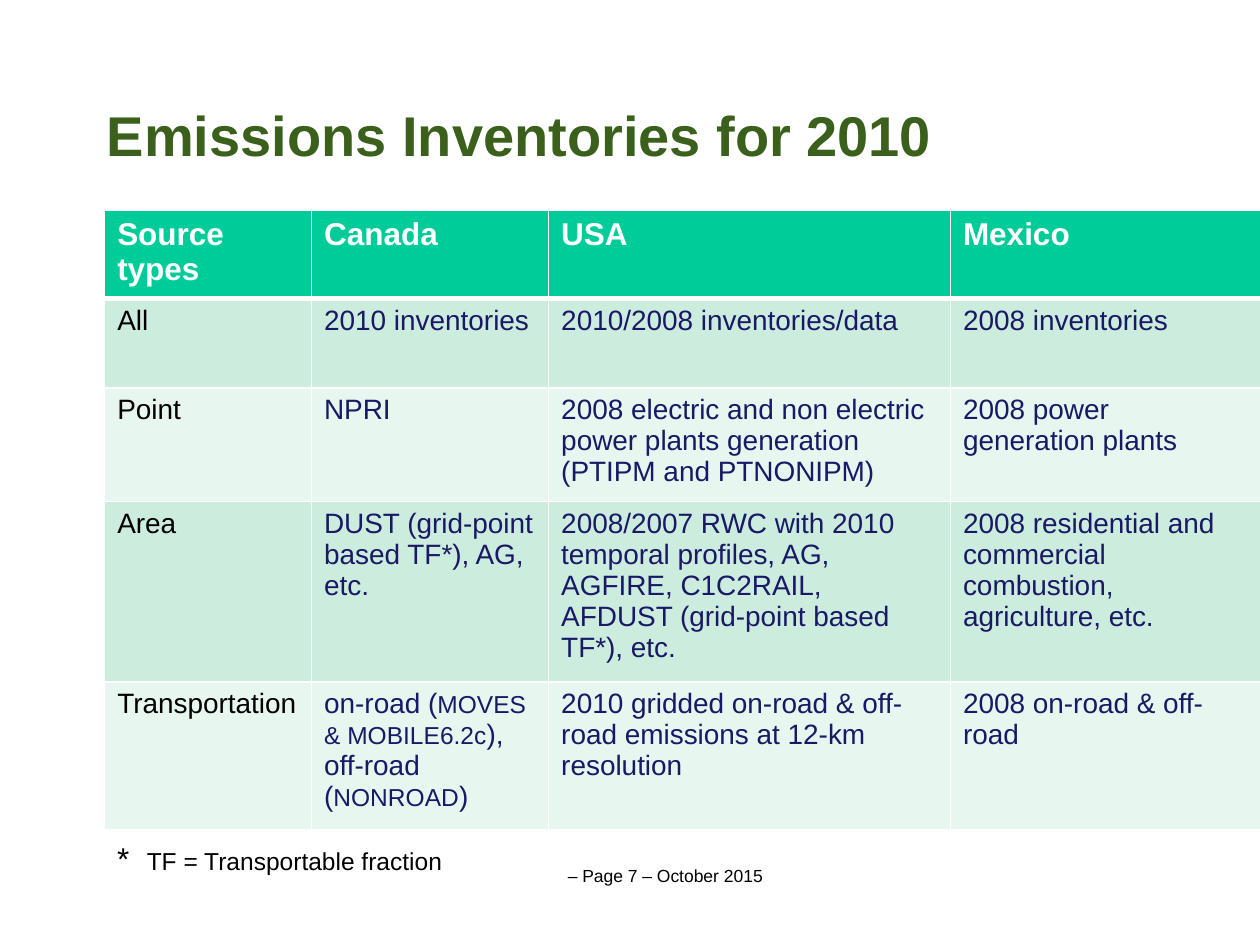
"""Build the slide on emissions inventories for 2010."""
from lxml import etree
from pptx import Presentation
from pptx.dml.color import RGBColor
from pptx.enum import text
from pptx.oxml import ns
from pptx.util import Cm, Pt

WHITE = RGBColor(0xFF, 0xFF, 0xFF)
BLACK = RGBColor(0, 0, 0)
NAVY = RGBColor(0x19, 0x19, 0x66)
OLIVE = RGBColor(0x3A, 0x60, 0x1B)
GREEN = RGBColor(0x00, 0xCC, 0x99)
BANDS = (RGBColor(0xCC, 0xEC, 0xDE), RGBColor(0xE7, 0xF6, 0xEF))

TITLE = "Emissions Inventories for 2010"
FOOTER = "– Page 7 – October 2015"
FOOTNOTE = [("*\t", 18), ("TF = Transportable fraction", 14)]
CANADA_TRANSPORT = [
    [("on-road (", 16), ("MOVES & MOBILE6.2c", 14), ("),", 16)],
    [("off-road (", 16), ("NONROAD", 14), (")", 16)],
]
INVENTORIES = [
    ["Source types", "Canada", "USA", "Mexico"],
    ["All", "2010 inventories", "2010/2008 inventories/data", "2008 inventories"],
    ["Point", "NPRI",
     "2008 electric and non electric power plants generation (PTIPM and PTNONIPM)",
     "2008 power generation plants"],
    ["Area", "DUST (grid-point based TF*), AG, etc.",
     "2008/2007 RWC with 2010 temporal profiles, AG, AGFIRE, C1C2RAIL, "
     "AFDUST (grid-point based TF*), etc.",
     "2008 residential and commercial combustion, agriculture, etc."],
    ["Transportation", CANADA_TRANSPORT,
     "2010 gridded on-road & off-road emissions at 12-km resolution",
     "2008 on-road & off-road"],
]
COLUMN_WIDTHS = (4.17, 4.78, 8.1, 6.25)
ROW_HEIGHTS = (1.78, 1.8, 2.29, 2.97, 2.97)
LEFT = 2.11


def add_runs(paragraph, pieces, color, bold=False):
    for words, size in pieces:
        run = paragraph.add_run()
        run.text = words
        run.font.name = "Arial"
        run.font.size = Pt(size)
        run.font.bold = bold
        run.font.color.rgb = color


def set_borders(cell, bottom):
    properties = cell._tc.get_or_add_tcPr()
    widths = {"lnL": 1, "lnR": 1, "lnT": 1, "lnB": bottom}
    for place, (side, width) in enumerate(widths.items()):
        line = etree.Element(ns.qn(f"a:{side}"), w=str(Pt(width)))
        fill = etree.SubElement(line, ns.qn("a:solidFill"))
        etree.SubElement(fill, ns.qn("a:srgbClr"), val=str(WHITE))
        properties.insert(place, line)


def fill_cell(cell, content, row, column):
    header = row == 0
    color = WHITE if header else BLACK if column == 0 else NAVY
    lines = [[(content, 18 if header else 16)]] if isinstance(content, str) else content
    frame = cell.text_frame
    for number, pieces in enumerate(lines):
        paragraph = frame.add_paragraph() if number else frame.paragraphs[0]
        add_runs(paragraph, pieces, color, header)
    cell.fill.solid()
    cell.fill.fore_color.rgb = GREEN if header else BANDS[(row - 1) % 2]
    set_borders(cell, 3 if header or row == 0 else 1)


def add_inventories(slide):
    table = slide.shapes.add_table(
        len(INVENTORIES), len(COLUMN_WIDTHS), Cm(LEFT), Cm(4.24),
        Cm(sum(COLUMN_WIDTHS)), Cm(sum(ROW_HEIGHTS))).table
    for column, width in zip(table.columns, COLUMN_WIDTHS):
        column.width = Cm(width)
    for row, height in zip(table.rows, ROW_HEIGHTS):
        row.height = Cm(height)
    for row, contents in enumerate(INVENTORIES):
        for column, content in enumerate(contents):
            fill_cell(table.cell(row, column), content, row, column)


def add_note(slide, top, width, height, pieces, wrap):
    frame = slide.shapes.add_textbox(Cm(LEFT), Cm(top), Cm(width), Cm(height)).text_frame
    frame.word_wrap = wrap
    add_runs(frame.paragraphs[0], pieces, BLACK)
    return frame.paragraphs[0]


def main():
    deck = Presentation()
    deck.slide_width, deck.slide_height = Cm(25.4), Cm(19.05)
    slide = deck.slides.add_slide(deck.slide_layouts[5])

    footer = add_note(slide, 17.32, 22.6, 0.69, [(FOOTER, 10)], True)
    footer.alignment = text.PP_ALIGN.CENTER

    title = slide.shapes.title
    title.left, title.top, title.width, title.height = Cm(1.9), Cm(1.4), Cm(22.22), Cm(2.62)
    title.text_frame.auto_size = text.MSO_AUTO_SIZE.NONE
    title.text_frame.vertical_anchor = text.MSO_ANCHOR.MIDDLE
    heading = title.text_frame.paragraphs[0]
    heading.alignment = text.PP_ALIGN.LEFT
    add_runs(heading, [(TITLE, 32)], OLIVE, True)

    add_inventories(slide)

    footnote = add_note(slide, 16.79, 7.09, 0.89, FOOTNOTE, False)
    tabs = etree.SubElement(footnote._p.get_or_add_pPr(), ns.qn("a:tabLst"))
    etree.SubElement(tabs, ns.qn("a:tab"), pos=str(Cm(0.6)), algn="l")

    deck.save("out.pptx")


if __name__ == "__main__":
    main()
